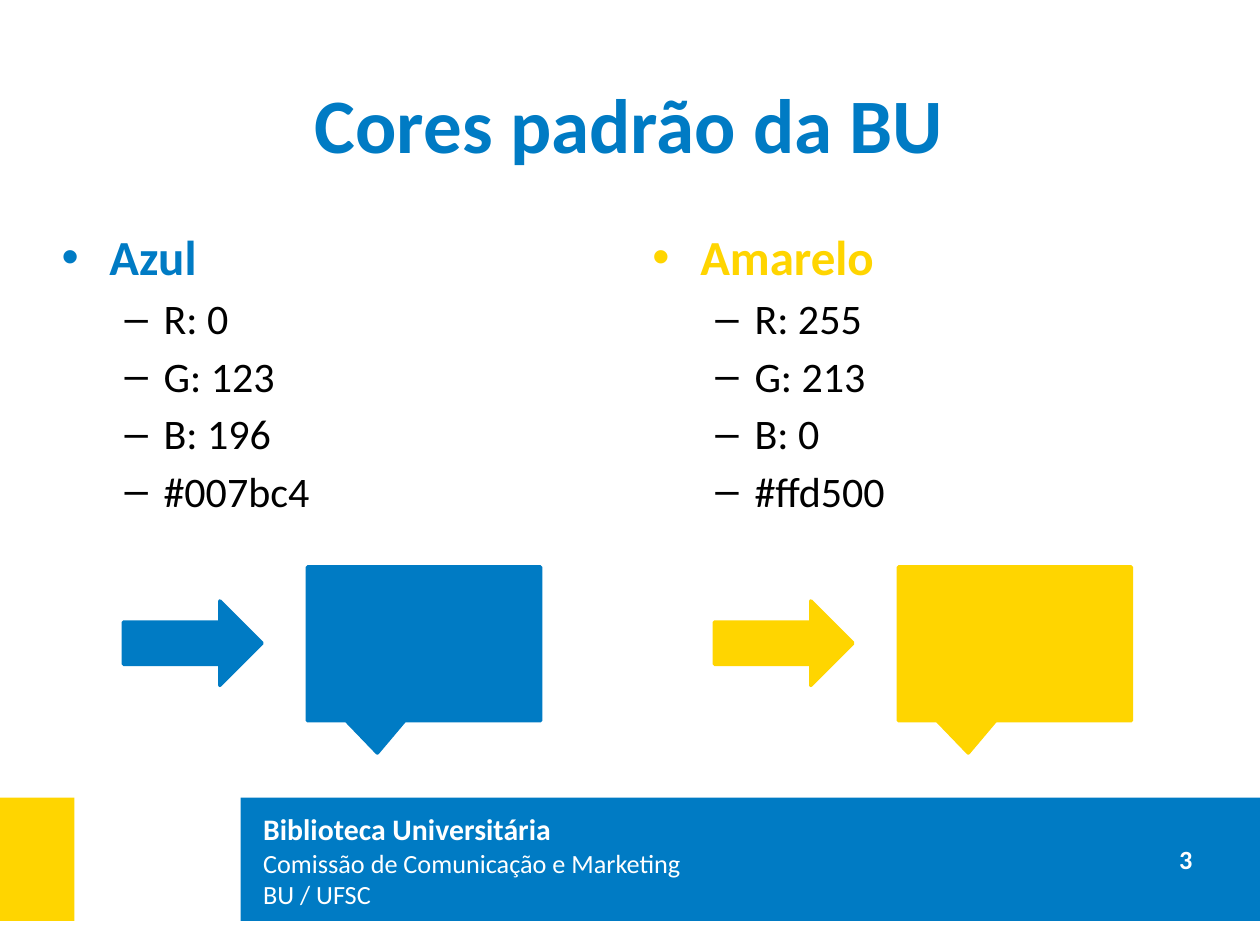
from collections import namedtuple

from lxml import etree
from pptx import Presentation
from pptx import util as u
from pptx.dml.color import RGBColor
from pptx.enum import shapes, text
from pptx.oxml.ns import qn

Box = namedtuple("Box", "column row columns rows")

COLORS = {"blue": "007BC4", "yellow": "FFD500", "white": "FFFFFF", "black": "000000"}
SLIDE = Box(0, 0, 100, 75)
CELL = u.Inches(0.1)
FONT = "Calibri"
SWATCHES = [
    ("Azul", "blue", ["R: 0", "G: 123", "B: 196", "#007bc4"]),
    ("Amarelo", "yellow", ["R: 255", "G: 213", "B: 0", "#ffd500"]),
]


def inside(box, column, row, columns, rows):
    return Box(box.column + column, box.row + row, columns, rows)


def lengths(box):
    return [round(value * CELL) for value in box]


def rgb(name):
    return RGBColor.from_string(COLORS[name])


def add_frame(slide, box, anchor=text.MSO_ANCHOR.MIDDLE):
    frame = slide.shapes.add_textbox(*lengths(box)).text_frame
    frame.word_wrap = True
    frame.vertical_anchor = anchor
    return frame


def add_text(frame, words, size, color, bold=False, align=text.PP_ALIGN.LEFT,
             bullet=None, indent=0, hanging=0, before=0):
    first = not frame.text
    paragraph = frame.paragraphs[0] if first else frame.add_paragraph()
    paragraph.alignment = align
    paragraph.space_before = u.Pt(0 if first else before)
    if bullet:
        properties = paragraph._p.get_or_add_pPr()
        properties.set("marL", str(u.Inches(indent)))
        properties.set("indent", str(-u.Inches(hanging)))
        etree.SubElement(properties, qn("a:buFont"), typeface="Arial")
        etree.SubElement(properties, qn("a:buChar"), char=bullet)
    run = paragraph.add_run()
    run.text = words
    run.font.name = FONT
    run.font.size = u.Pt(size)
    run.font.bold = bold
    run.font.color.rgb = rgb(color)


def add_block(slide, kind, box, color, outline=0):
    shape = slide.shapes.add_shape(kind, *lengths(box))
    shape.shadow.inherit = False
    shape.fill.solid()
    shape.fill.fore_color.rgb = rgb(color)
    if outline:
        shape.line.color.rgb = rgb(color)
        shape.line.width = u.Pt(outline)
    else:
        shape.line.fill.background()
    return shape


def add_footer(slide, box):
    kind = shapes.MSO_SHAPE.RECTANGLE
    add_block(slide, kind, inside(box, 19.1, 0, 80.9, box.rows), "blue")
    add_block(slide, kind, inside(box, 0, 0, 5.9, box.rows), "yellow")
    frame = add_frame(slide, inside(box, 19.9, 0.2, 59.1, 9.6))
    add_text(frame, "Biblioteca Universitária", 17, "white", bold=True)
    for words in ["Comissão de Comunicação e Marketing", "BU / UFSC"]:
        add_text(frame, words, 15, "white")
    number = add_frame(slide, inside(box, 88.2, 0, 11.8, box.rows))
    add_text(number, "3", 15, "white", bold=True, align=text.PP_ALIGN.CENTER)


def add_title(slide, box):
    add_text(add_frame(slide, box), "Cores padrão da BU", 44, "blue", bold=True,
             align=text.PP_ALIGN.CENTER)


def add_swatch(slide, box, name, color, values):
    frame = add_frame(slide, box, text.MSO_ANCHOR.TOP)
    add_text(frame, name, 28, color, bold=True, bullet="•", indent=0.38, hanging=0.38)
    for value in values:
        add_text(frame, value, 24, "black", bullet="–", indent=0.81, hanging=0.31,
                 before=4.1)
    add_block(slide, shapes.MSO_SHAPE.RIGHT_ARROW, inside(box, 5.9, 30.2, 11, 6.7),
              color, outline=2)
    callout = add_block(slide, shapes.MSO_SHAPE.RECTANGULAR_CALLOUT,
                        inside(box, 20.5, 27.5, 18.5, 12.2), color, outline=2)
    callout.adjustments[0] = -0.2
    callout.adjustments[1] = 0.71


def main():
    presentation = Presentation()
    presentation.slide_width = SLIDE.columns * CELL
    presentation.slide_height = SLIDE.rows * CELL
    slide = presentation.slides.add_slide(presentation.slide_layouts[6])
    add_footer(slide, inside(SLIDE, 0, 63.3, SLIDE.columns, 9.8))
    add_title(slide, inside(SLIDE, 3.9, 3.9, 92.1, 11.7))
    for index, swatch in enumerate(SWATCHES):
        add_swatch(slide, inside(SLIDE, 3.9 + 46.9 * index, 17.5, 45.2, 43.8), *swatch)
    presentation.save("out.pptx")


if __name__ == "__main__":
    main()
